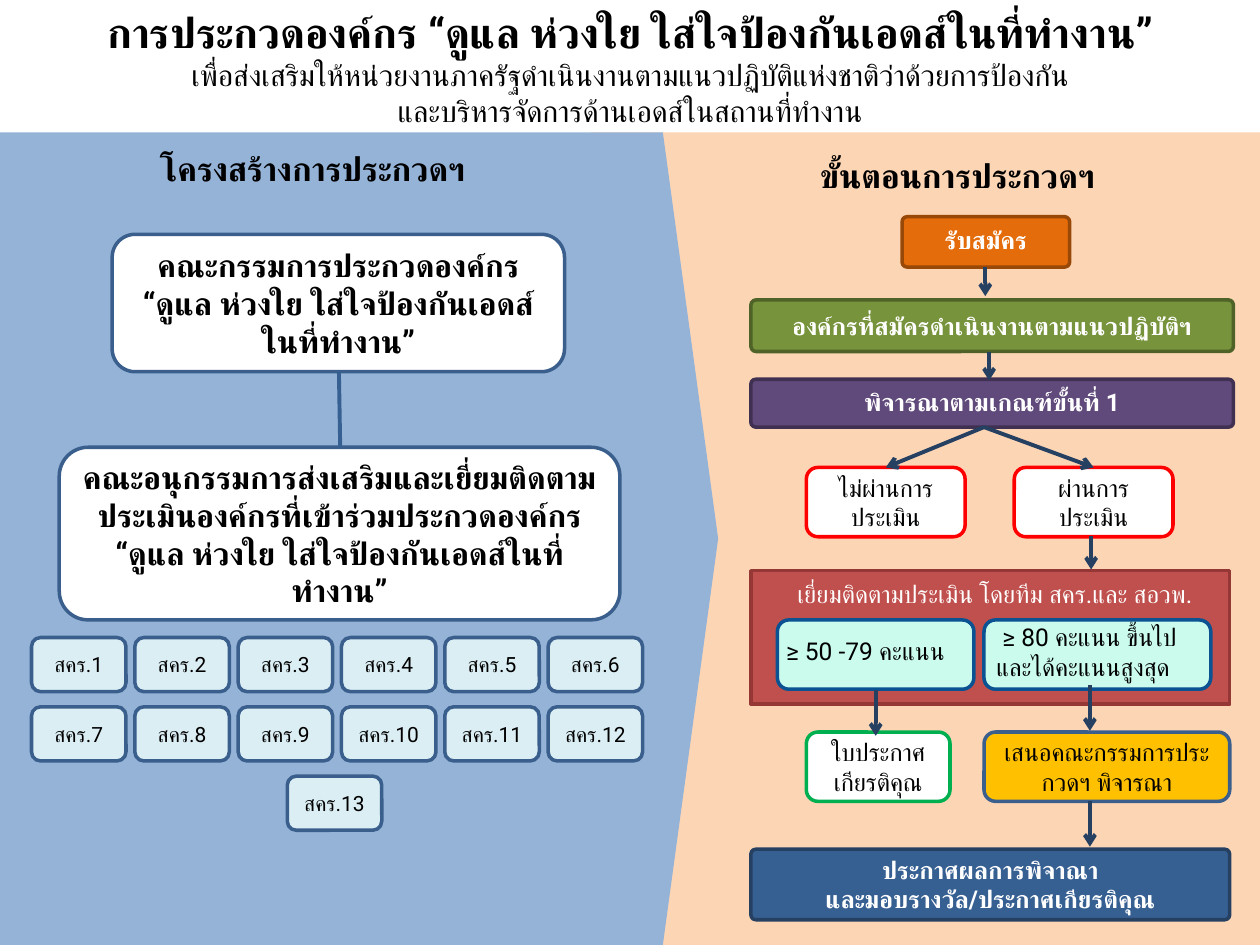
from lxml import etree
from pptx import Presentation
from pptx.dml.color import RGBColor
from pptx.enum.shapes import MSO_CONNECTOR, MSO_SHAPE
from pptx.enum.text import MSO_ANCHOR, MSO_AUTO_SIZE, PP_ALIGN
from pptx.oxml.ns import qn
from pptx.util import Inches, Pt

RECT, ROUND, ARROW = MSO_SHAPE.RECTANGLE, MSO_SHAPE.ROUNDED_RECTANGLE, MSO_SHAPE.PENTAGON
LEFT, CENTER = PP_ALIGN.LEFT, PP_ALIGN.CENTER
TOP, MIDDLE = MSO_ANCHOR.TOP, MSO_ANCHOR.MIDDLE
STRAIGHT = MSO_CONNECTOR.STRAIGHT

THEME = {
    "font": "Roboto",
    "black": "000000", "white": "FFFFFF",
    "peach": "FCD5B5", "sky": "95B3D7", "ice": "DBEEF4", "mint": "CAFBED",
    "blue": "376092", "navy": "254061", "edge": "3A5F8C", "deep": "0B5292",
    "orange": "E46C0A", "brown": "984807", "green": "77933C", "moss": "4F6228",
    "purple": "604A7B", "plum": "403152", "brick": "C0504D", "wine": "953735",
    "red": "FF0000", "leaf": "00B050", "gold": "FFC000",
    "title": 24, "sub": 17, "head": 19, "board": 18, "step": 14, "unit": 12,
}


def write(shape, text, size="step", color="black", bold=False, align=CENTER,
          anchor=MIDDLE, space=None, first=None):
    """Fill a shape with text; first is the size of a bold opening line."""
    frame = shape.text_frame
    frame.word_wrap = True
    frame.auto_size = MSO_AUTO_SIZE.NONE
    frame.vertical_anchor = anchor
    frame.text = text
    for i, para in enumerate(frame.paragraphs):
        lead = first is not None and i == 0
        para.alignment = align
        if space:
            para.line_spacing = space
        font = para.runs[0].font
        font.name = THEME["font"]
        font.size = Pt(THEME[first if lead else size])
        font.bold = bold or lead
        font.color.rgb = RGBColor.from_string(THEME[color])
        # Thai letters take the complex-script typeface
        face = etree.SubElement(para.runs[0]._r.get_or_add_rPr(), qn("a:cs"))
        face.set("typeface", THEME["font"])


def draw(kind, x, y, w, h, fill, line=None, bend=None):
    shape = slide.shapes.add_shape(kind, Inches(x), Inches(y), Inches(w), Inches(h))
    shape.shadow.inherit = False
    shape.fill.solid()
    shape.fill.fore_color.rgb = RGBColor.from_string(THEME[fill])
    if line:
        shape.line.color.rgb = RGBColor.from_string(THEME[line])
        shape.line.width = Pt(2)
    else:
        shape.line.fill.background()
    if bend is not None:
        shape.adjustments[0] = bend
    return shape


deck = Presentation()
deck.slide_width, deck.slide_height = Inches(10), Inches(7.5)
slide = deck.slides.add_slide(deck.slide_layouts[5])

# Title
title = slide.shapes.title
title.left, title.top = Inches(0), Inches(0)
title.width, title.height = Inches(10), Inches(1.08)
write(title, "การประกวดองค์กร “ดูแล ห่วงใย ใส่ใจป้องกันเอดส์ในที่ทำงาน”\n"
      "เพื่อส่งเสริมให้หน่วยงานภาครัฐดำเนินงานตามแนวปฏิบัติแห่งชาติว่าด้วยการป้องกัน\n"
      "และบริหารจัดการด้านเอดส์ในสถานที่ทำงาน",
      size="sub", first="title", anchor=TOP)

# Two panels
draw(RECT, 4.69, 1.05, 5.31, 6.45, "peach")
draw(ARROW, 0, 1.05, 5.7, 6.45, "sky", bend=0.077)

# Committees
boards = [
    (0.89, 1.86, 3.59, 1.09,
     "คณะกรรมการประกวดองค์กร “ดูแล ห่วงใย ใส่ใจป้องกันเอดส์ในที่ทำงาน”"),
    (0.47, 3.55, 4.45, 1.37,
     "คณะอนุกรรมการส่งเสริมและเยี่ยมติดตามประเมินองค์กรที่เข้าร่วมประกวดองค์กร "
     "“ดูแล ห่วงใย ใส่ใจป้องกันเอดส์ในที่ทำงาน”"),
]
for x, y, w, h, text in boards:
    write(draw(ROUND, x, y, w, h, "white", "edge"), text, size="board", bold=True)

# Regional units: two rows of six, the last one centred below
for i in range(13):
    row, col = divmod(i, 6)
    x = 2.28 if row == 2 else 0.25 + 0.82 * col
    unit = draw(ROUND, x, 5.06 + 0.55 * row, 0.75, 0.43, "ice", "edge")
    write(unit, f"สคร.{i + 1}", size="unit")

# Main steps
steps = [
    (7.16, 1.72, 1.33, 0.4, "orange", "brown", 0.1, 0.9, "รับสมัคร"),
    (5.96, 2.38, 3.83, 0.41, "green", "moss", 0.1, None,
     "องค์กรที่สมัครดำเนินงานตามแนวปฏิบัติฯ"),
    (5.96, 3.01, 3.83, 0.38, "purple", "plum", 0.1, 0.9, "พิจารณาตามเกณฑ์ขั้นที่ 1"),
    (5.96, 6.74, 3.8, 0.56, "blue", "navy", 0.07, None,
     "ประกาศผลการพิจาณา\nและมอบรางวัล/ประกาศเกียรติคุณ"),
]
for x, y, w, h, fill, line, bend, space, text in steps:
    write(draw(ROUND, x, y, w, h, fill, line, bend), text,
          color="white", bold=True, space=space)

# Outcomes
draw(RECT, 5.96, 4.53, 3.8, 1.06, "brick", "wine")
draw(ROUND, 6.17, 4.92, 1.56, 0.55, "mint", "deep")
draw(ROUND, 7.81, 4.92, 1.8, 0.55, "mint", "deep")
ends = [
    (6.4, 3.71, 1.26, "white", "red", "ไม่ผ่านการประเมิน"),
    (8.05, 3.71, 1.26, "white", "red", "ผ่านการประเมิน"),
    (6.4, 5.81, 1.14, "white", "leaf", "ใบประกาศ\nเกียรติคุณ"),
    (7.81, 5.81, 1.95, "gold", "edge", "เสนอคณะกรรมการประกวดฯ พิจารณา"),
]
for x, y, w, fill, line, text in ends:
    write(draw(ROUND, x, y, w, 0.55, fill, line), text)

# Headings and labels
bold = {"size": "head", "bold": True, "align": LEFT}
labels = [
    (1.17, 1.13, 3.05, 0.42, "โครงสร้างการประกวดฯ", bold),
    (6.41, 1.18, 2.73, 0.42, "ขั้นตอนการประกวดฯ", bold),
    (5.94, 4.55, 3.91, 0.34, "เยี่ยมติดตามประเมิน โดยทีม สคร.และ สอวพ.", {"color": "white"}),
    (6.14, 5, 1.56, 0.34, "≥ 50 -79 คะแนน", {"align": LEFT}),
    (7.81, 4.89, 1.8, 0.57, " ≥ 80 คะแนน ขึ้นไป และได้คะแนนสูงสุด", {"align": LEFT}),
]
for x, y, w, h, text, look in labels:
    label = slide.shapes.add_textbox(Inches(x), Inches(y), Inches(w), Inches(h))
    write(label, text, anchor=TOP, **look)

# Links: the first is plain, the rest end in an arrow
links = [
    (2.69, 2.95, 2.7, 3.55),
    (7.82, 2.12, 7.82, 2.35),
    (7.85, 2.79, 7.85, 3.02),
    (7.81, 3.39, 7.03, 3.71),
    (7.81, 3.39, 8.68, 3.71),
    (8.66, 4.25, 8.66, 4.52),
    (6.95, 5.48, 6.95, 5.84),
    (8.65, 5.44, 8.65, 5.8),
    (8.65, 6.36, 8.65, 6.72),
]
for i, ends in enumerate(links):
    link = slide.shapes.add_connector(STRAIGHT, *[Inches(v) for v in ends])
    link.line.width = Pt(2.25)
    link.line.color.rgb = RGBColor.from_string(THEME["navy" if i else "blue"])
    if i:
        etree.SubElement(link.line._get_or_add_ln(), qn("a:tailEnd")).set("type", "arrow")
    etree.SubElement(link._element.spPr, qn("a:effectLst"))

deck.save("out.pptx")
